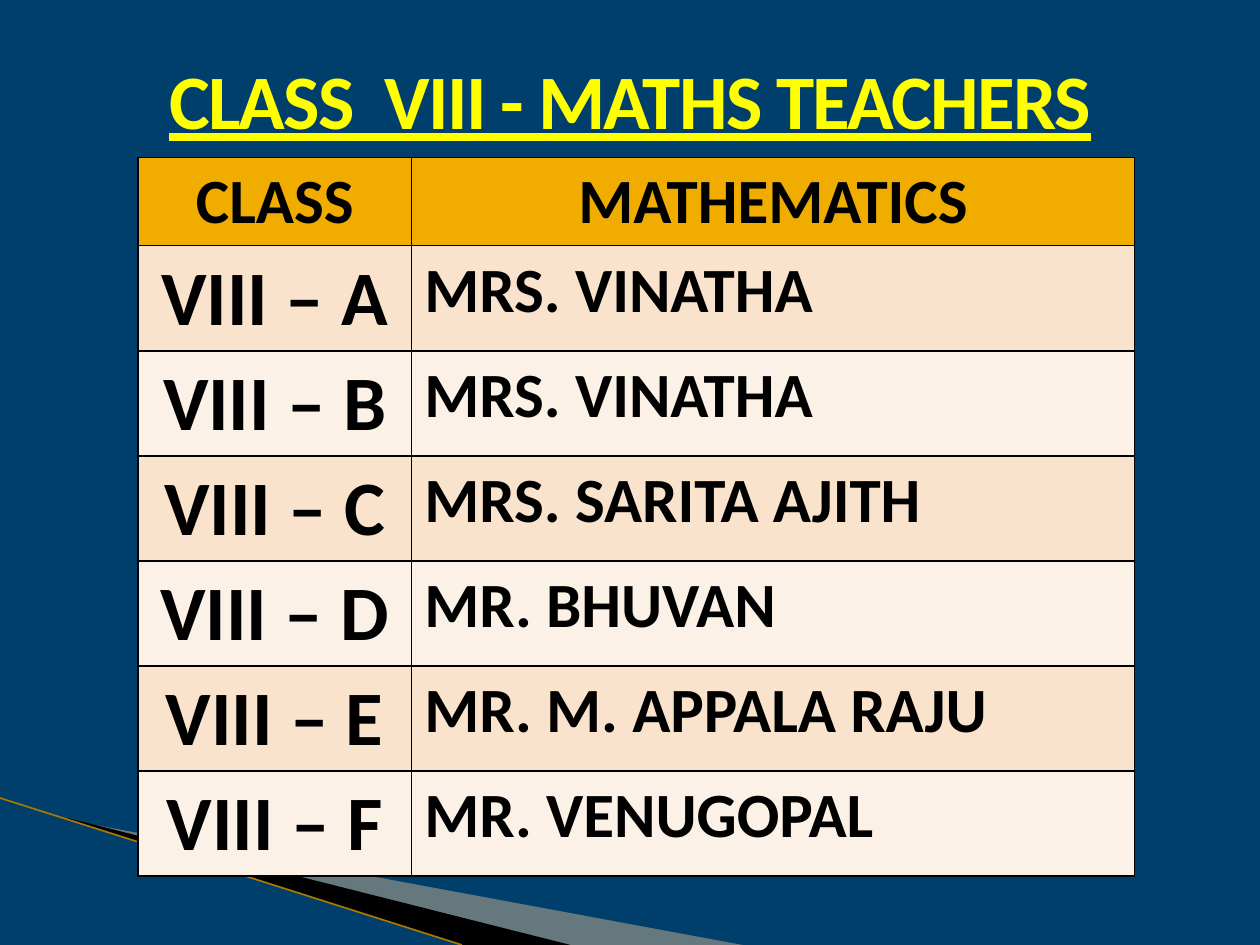
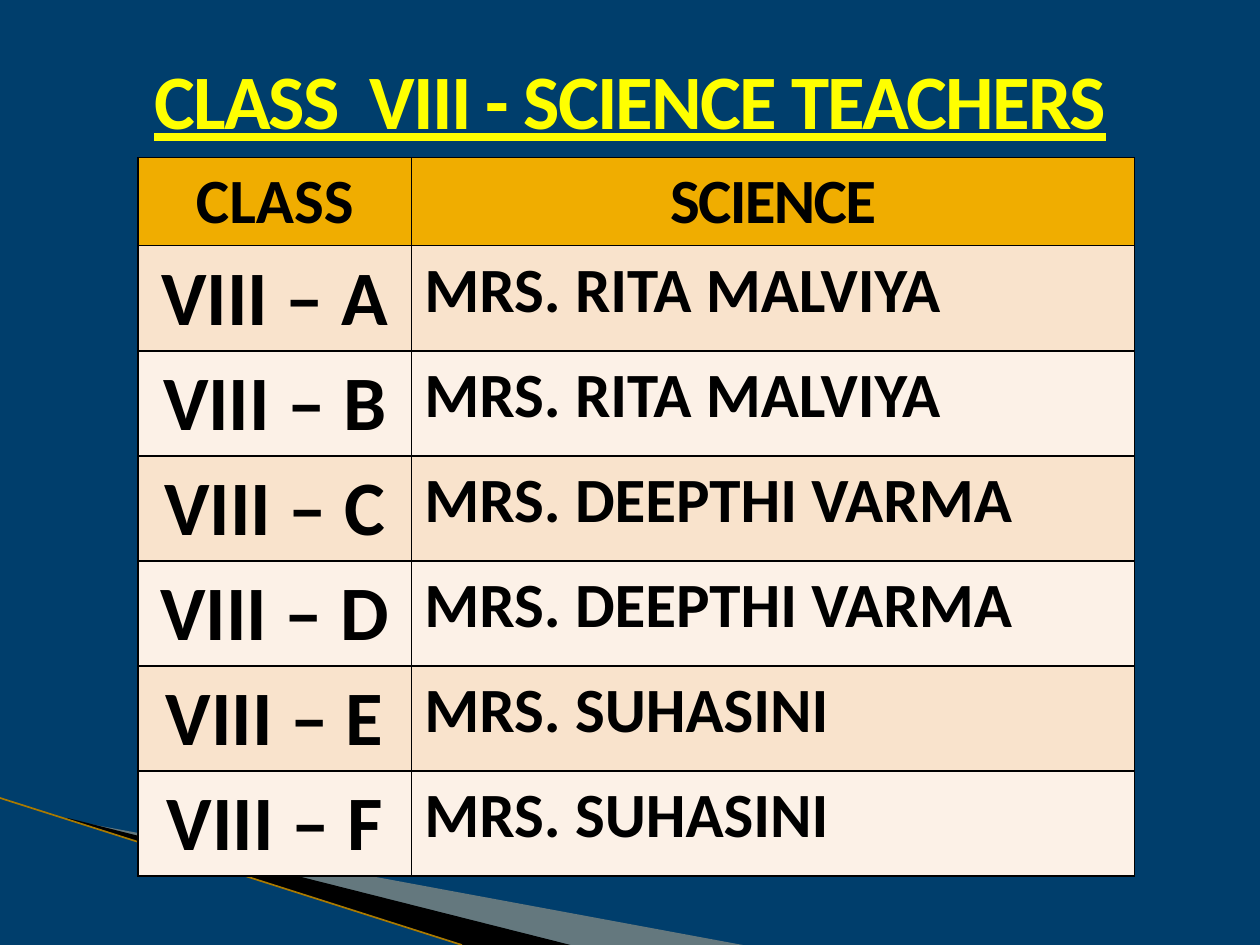
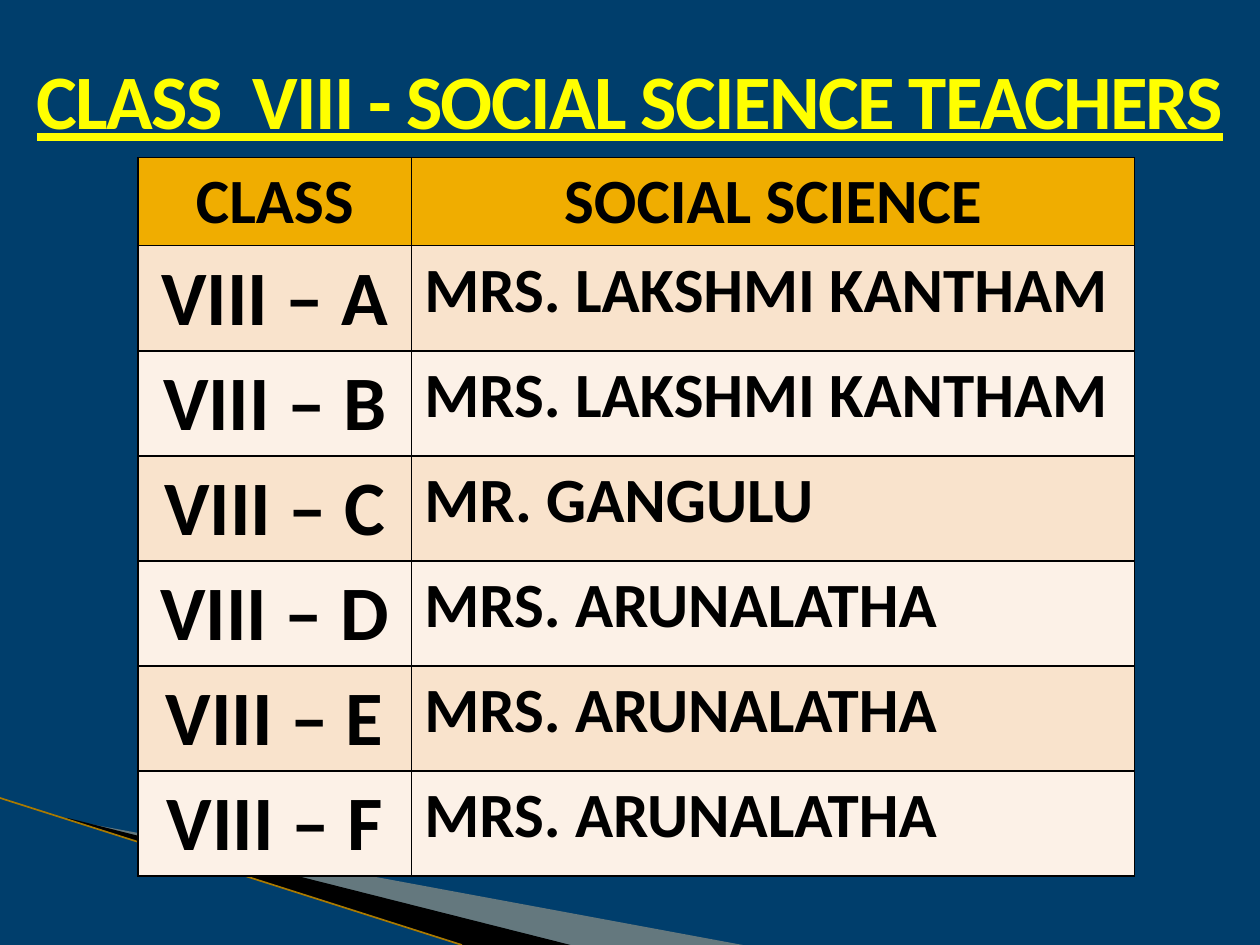
from lxml.etree import SubElement
from pptx import Presentation
from pptx.dml.color import RGBColor
from pptx.enum.shapes import MSO_CONNECTOR
from pptx.enum.text import MSO_AUTO_SIZE, PP_ALIGN
from pptx.oxml.ns import qn
from pptx.util import Pt

NAVY = RGBColor(0x00, 0x3E, 0x6C)
YELLOW = RGBColor(0xFF, 0xFF, 0x00)
BLACK = RGBColor(0x00, 0x00, 0x00)
AMBER = RGBColor(0xF0, 0xAD, 0x00)
PEACH = RGBColor(0xF9, 0xE3, 0xCC)
CREAM = RGBColor(0xFC, 0xF1, 0xE7)
SAND = RGBColor(0xFC, 0xCF, 0x9B)
BRONZE = RGBColor(0xAA, 0x7A, 0x00)

FONT = "Calibri"
WIDTH, HEIGHT = 720, 540
CLASS_WIDTH, TEACHER_WIDTH = 156.5, 413
HEADER_HEIGHT, ROW_HEIGHT = 50.4, 60
SECTIONS = "ABCDEF"

SUBJECTS = [
    ("MATHS", "MATHEMATICS", 0,
     ["MRS. VINATHA", "MRS. VINATHA", "MRS. SARITA AJITH",
      "MR. BHUVAN", "MR. M. APPALA RAJU", "MR. VENUGOPAL"]),
    ("SCIENCE", "SCIENCE", -1,
     ["MRS. RITA MALVIYA", "MRS. RITA MALVIYA", "MRS. DEEPTHI VARMA",
      "MRS. DEEPTHI VARMA", "MRS. SUHASINI", "MRS. SUHASINI"]),
    ("SOCIAL SCIENCE", "SOCIAL SCIENCE", 0,
     ["MRS. LAKSHMI KANTHAM", "MRS. LAKSHMI KANTHAM", "MR. GANGULU",
      "MRS. ARUNALATHA", "MRS. ARUNALATHA", "MRS. ARUNALATHA"]),
]


def add_run(p, text, size, color, spacing=0):
    r = p.add_run()
    r.text = text
    r.font.name = FONT
    r.font.size = Pt(size)
    r.font.bold = True
    r.font.color.rgb = color
    if spacing:
        r.font._element.set("spc", str(spacing * 100))
    return r


def set_frame(sp, frame):
    left, top, width, height = [Pt(v) for v in frame]
    for pt in sp._element.iter(qn("a:pt")):
        pt.set("x", str(int(pt.get("x")) + sp.left - left))
        pt.set("y", str(int(pt.get("y")) + sp.top - top))
    outline = next(sp._element.iter(qn("a:path")))
    outline.set("w", str(width))
    outline.set("h", str(height))
    sp.left, sp.top, sp.width, sp.height = left, top, width, height


def add_wedge(s, points, frame, color, opacity=100):
    start, *rest = [(Pt(x), Pt(y)) for x, y in points]
    builder = s.shapes.build_freeform(*start)
    builder.add_line_segments(rest)
    sp = builder.convert_to_shape()
    set_frame(sp, frame)
    sp.shadow.inherit = False
    sp.line.fill.background()
    sp.fill.solid()
    sp.fill.fore_color.rgb = color
    if opacity < 100:
        clr = sp._element.spPr.find(".//" + qn("a:srgbClr"))
        SubElement(clr, qn("a:alpha"), val=str(opacity * 1000))


def add_swoosh(s):
    add_wedge(s, [(39.6, 468.7), (424.5, HEIGHT), (325.4, HEIGHT), (39.6, 468)],
              (56.2, 393.8, 299.5, 113.8), SAND, 40)
    add_wedge(s, [(38.2, 467.3), (326, HEIGHT), (264, HEIGHT), (38.9, 468)],
              (-4.3, 455.8, 299.5, 66.2), BLACK)
    edge = s.shapes.add_connector(
        MSO_CONNECTOR.STRAIGHT, Pt(0), Pt(456), Pt(264), Pt(HEIGHT))
    edge.line.color.rgb = BRONZE
    edge.line.width = Pt(0.95)
    SubElement(edge._element.spPr, qn("a:effectLst"))


def add_title(s, text):
    tf = s.shapes.add_textbox(Pt(0), Pt(0), Pt(WIDTH), Pt(87)).text_frame
    tf.word_wrap = True
    tf.auto_size = MSO_AUTO_SIZE.SHAPE_TO_FIT_TEXT
    p = tf.paragraphs[0]
    p.alignment = PP_ALIGN.CENTER
    p.line_spacing = 1.5
    pPr = p._p.get_or_add_pPr()
    pPr.set("marL", str(Pt(27)))
    pPr.set("indent", str(-Pt(27)))
    add_run(p, text, 44, YELLOW, -1).font.underline = True


def add_borders(cell):
    tcPr = cell._tc.get_or_add_tcPr()
    for i, side in enumerate(("lnL", "lnR", "lnT", "lnB")):
        ln = tcPr.makeelement(qn("a:" + side), {"w": str(Pt(1))})
        fill = SubElement(ln, qn("a:solidFill"))
        SubElement(fill, qn("a:srgbClr"), val=str(BLACK))
        tcPr.insert(i, ln)


def fill_cell(cell, text, size, color, align=PP_ALIGN.CENTER, spacing=0):
    cell.fill.solid()
    cell.fill.fore_color.rgb = color
    add_borders(cell)
    p = cell.text_frame.paragraphs[0]
    p.alignment = align
    add_run(p, text, size, BLACK, spacing)


def add_teacher_table(s, subject, spacing, teachers):
    table = s.shapes.add_table(
        len(teachers) + 1, 2, Pt(78.8), Pt(90),
        Pt(CLASS_WIDTH + TEACHER_WIDTH),
        Pt(HEADER_HEIGHT + ROW_HEIGHT * len(teachers))).table
    table.columns[0].width = Pt(CLASS_WIDTH)
    table.columns[1].width = Pt(TEACHER_WIDTH)
    table.rows[0].height = Pt(HEADER_HEIGHT)
    fill_cell(table.cell(0, 0), "CLASS", 36, AMBER)
    fill_cell(table.cell(0, 1), subject, 36, AMBER, spacing=spacing)
    for row, (section, teacher) in enumerate(zip(SECTIONS, teachers), 1):
        color = PEACH if row % 2 else CREAM
        table.rows[row].height = Pt(ROW_HEIGHT)
        fill_cell(table.cell(row, 0), f"VIII – {section}", 44, color)
        fill_cell(table.cell(row, 1), teacher, 36, color, PP_ALIGN.LEFT)


def main():
    prs = Presentation()
    prs.slide_width, prs.slide_height = Pt(WIDTH), Pt(HEIGHT)
    background = prs.slide_master.background.fill
    background.solid()
    background.fore_color.rgb = NAVY
    for name, subject, spacing, teachers in SUBJECTS:
        s = prs.slides.add_slide(prs.slide_layouts[6])
        add_swoosh(s)
        add_title(s, f"CLASS  VIII - {name} TEACHERS")
        add_teacher_table(s, subject, spacing, teachers)
    prs.save("out.pptx")


if __name__ == "__main__":
    main()
